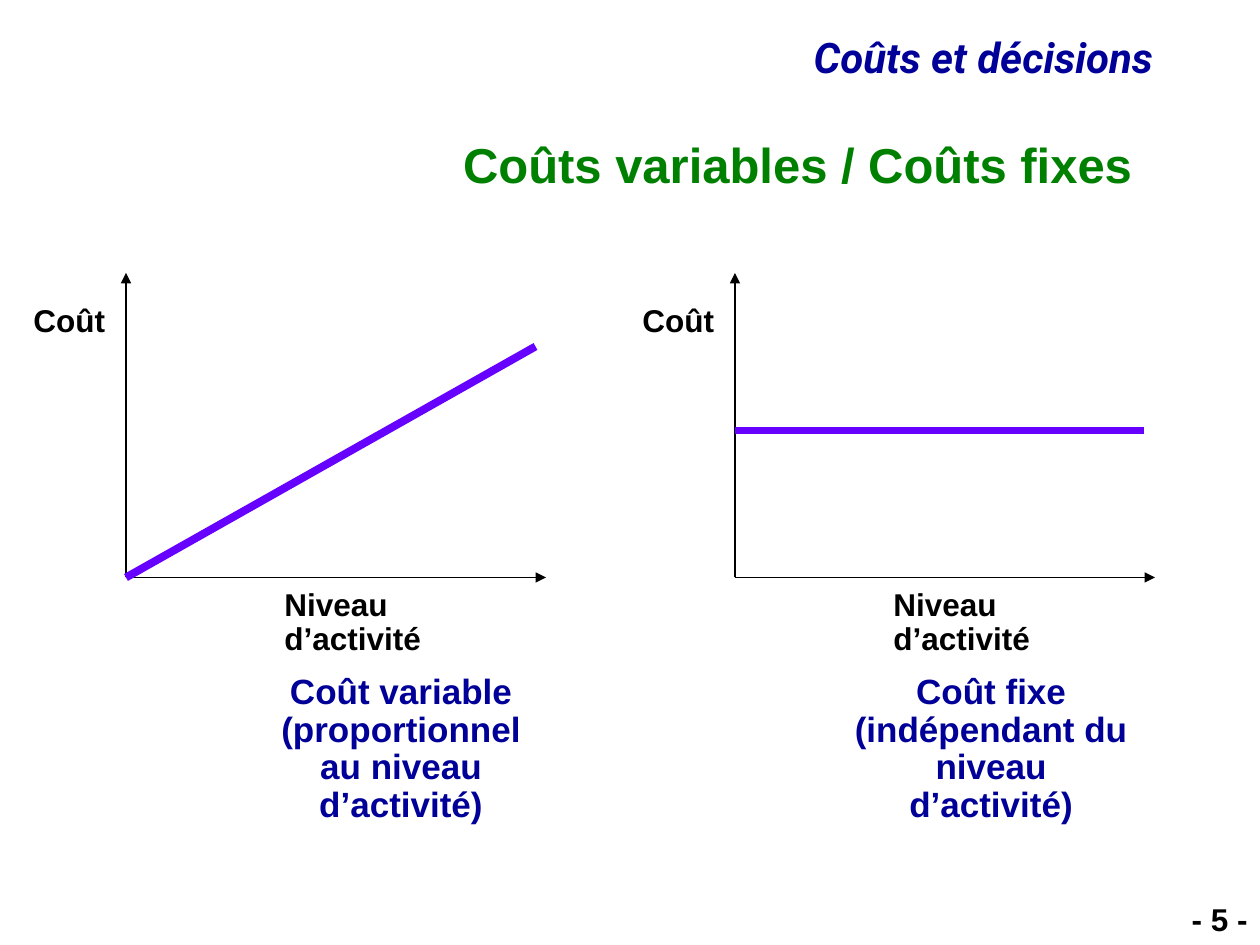
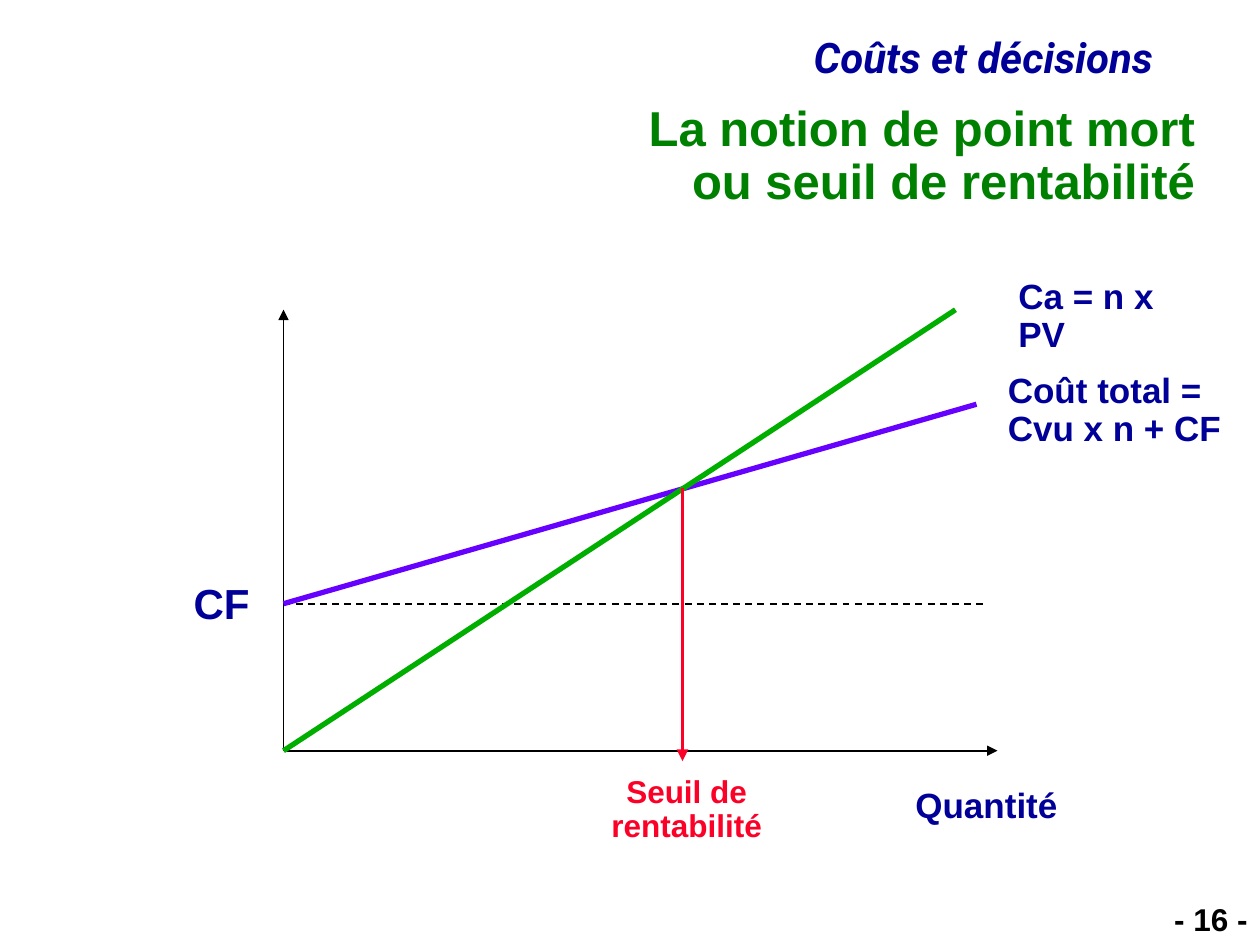
"""Build two slides on cost behaviour and the break-even point."""
from lxml import etree
from pptx import Presentation
from pptx.dml.color import RGBColor
from pptx.enum.dml import MSO_LINE
from pptx.enum.shapes import MSO_CONNECTOR
from pptx.enum.text import MSO_ANCHOR, MSO_AUTO_SIZE, PP_ALIGN
from pptx.oxml.ns import qn
from pptx.util import Inches, Pt

STRAIGHT = MSO_CONNECTOR.STRAIGHT
DASH = MSO_LINE.DASH
LEFT, CENTER, RIGHT = PP_ALIGN.LEFT, PP_ALIGN.CENTER, PP_ALIGN.RIGHT
TOP, MIDDLE = MSO_ANCHOR.TOP, MSO_ANCHOR.MIDDLE
GROW, FIXED = MSO_AUTO_SIZE.SHAPE_TO_FIT_TEXT, MSO_AUTO_SIZE.NONE

COLUMNS, ROWS = 120, 90
CELL = Inches(10) / COLUMNS

THEME = {
    "colors": {
        "navy": RGBColor(0x00, 0x00, 0x99),
        "green": RGBColor(0x00, 0x80, 0x00),
        "black": RGBColor(0x00, 0x00, 0x00),
        "cost": RGBColor(0x66, 0x00, 0xFF),
        "revenue": RGBColor(0x00, 0xAE, 0x00),
        "threshold": RGBColor(0xFC, 0x01, 0x28),
    },
    "fonts": {
        "header": {"name": "Roboto", "size": Pt(24), "bold": True, "italic": True},
        "title": {"name": "Arial", "size": Pt(28), "bold": True},
        "large": {"name": "Arial", "size": Pt(24), "bold": True},
        "medium": {"name": "Arial", "size": Pt(20), "bold": True},
        "small": {"name": "Arial", "size": Pt(18), "bold": True},
    },
}


def add_text(slide, text, box, font, color, align=LEFT, wrap=False, anchor=TOP, fit=GROW):
    shape = slide.shapes.add_textbox(*(round(cells * CELL) for cells in box))
    frame = shape.text_frame
    frame.text = text
    for name, value in {"word_wrap": wrap, "vertical_anchor": anchor, "auto_size": fit}.items():
        setattr(frame, name, value)
    for paragraph in frame.paragraphs:
        paragraph.alignment = align
        paragraph.line_spacing = 0.9
        for run in paragraph.runs:
            for name, value in THEME["fonts"][font].items():
                setattr(run.font, name, value)
            run.font.color.rgb = THEME["colors"][color]


def add_line(slide, start, end, color="black", width=1, arrow=False, dash=None):
    points = (round(cells * CELL) for cells in (*start, *end))
    connector = slide.shapes.add_connector(STRAIGHT, *points)
    connector.line.color.rgb = THEME["colors"][color]
    for name, value in {"width": Pt(width), "dash_style": dash}.items():
        setattr(connector.line, name, value)
    if arrow:
        etree.SubElement(connector.line._get_or_add_ln(), qn("a:tailEnd"), type="triangle")
    etree.SubElement(connector._element.spPr, qn("a:effectLst"))


presentation = Presentation()
presentation.slide_width = round(COLUMNS * CELL)
presentation.slide_height = round(ROWS * CELL)
blank_layout = presentation.slide_layouts[6]

slides = []
for number, title, column, row in (
    (5, "Coûts variables / Coûts fixes", 14, 13),
    (16, "La notion de point mort\vou seuil de rentabilité", 20, 12),
):
    slide = presentation.slides.add_slide(blank_layout)
    add_text(slide, "Coûts et décisions", (15, 3, 96, 5.5), "header", "navy", RIGHT, True)
    add_text(slide, f"- {number} -", (109, 85.5, 11, 4.5), "small", "black", RIGHT, True)
    add_text(slide, title, (column, row, 95, 6), "title", "green", RIGHT, True, MIDDLE, FIXED)
    slides.append(slide)
behaviour_slide, threshold_slide = slides

GRAPH_STEP = 58
cost_graphs = (
    (55, 33, "Coût variable\n(proportionnel\vau niveau d’activité)", 21.4, 33.6),
    (41, 41, "Coût fixe\n(indépendant du\vniveau d’activité)", 80, 28.8),
)
for index, (cost_start, cost_end, caption, caption_left, caption_width) in enumerate(cost_graphs):
    shift = index * GRAPH_STEP
    origin = (12 + shift, 55)
    add_line(behaviour_slide, origin, (12 + shift, 26), arrow=True)
    add_line(behaviour_slide, origin, (52 + shift, 55), arrow=True)
    add_line(behaviour_slide, (12 + shift, cost_start), (51 + shift, cost_end), "cost", 4.5)
    add_text(behaviour_slide, "Coût", (2 + shift, 28.5, 9.2, 4.4), "small", "black")
    add_text(behaviour_slide, "Niveau d’activité", (25.9 + shift, 55.5, 26, 4.4), "small", "black")
    add_text(behaviour_slide, caption, (caption_left, 63.6, caption_width, 12),
             "medium", "navy", CENTER, True)

origin, fixed_cost = (27, 71.5), (27, 57.5)
add_line(threshold_slide, origin, (27, 29.5), arrow=True)
add_line(threshold_slide, origin, (95, 71.5), arrow=True)
add_line(threshold_slide, fixed_cost, (94, 57.5), dash=DASH)
add_line(threshold_slide, fixed_cost, (93, 38.5), "cost", 3)
add_line(threshold_slide, origin, (91, 29.5), "revenue", 3)
add_line(threshold_slide, (65, 46.5), (65, 72.5), "threshold", 2.25, arrow=True)

for text, box, font, color, align in (
    ("Ca = n x PV", (95.8, 26, 20.6, 4.8), "medium", "navy", LEFT),
    ("Coût total =\vCvu x n + CF", (94.8, 35, 22.7, 8.4), "medium", "navy", LEFT),
    ("CF", (17.25, 55, 7.8, 5.5), "large", "navy", LEFT),
    ("Seuil de\nrentabilité", (57, 73.3, 16.8, 7.7), "small", "threshold", CENTER),
    ("Quantité", (86, 74.5, 16, 4.8), "medium", "navy", LEFT),
):
    add_text(threshold_slide, text, box, font, color, align)

presentation.save("out.pptx")
